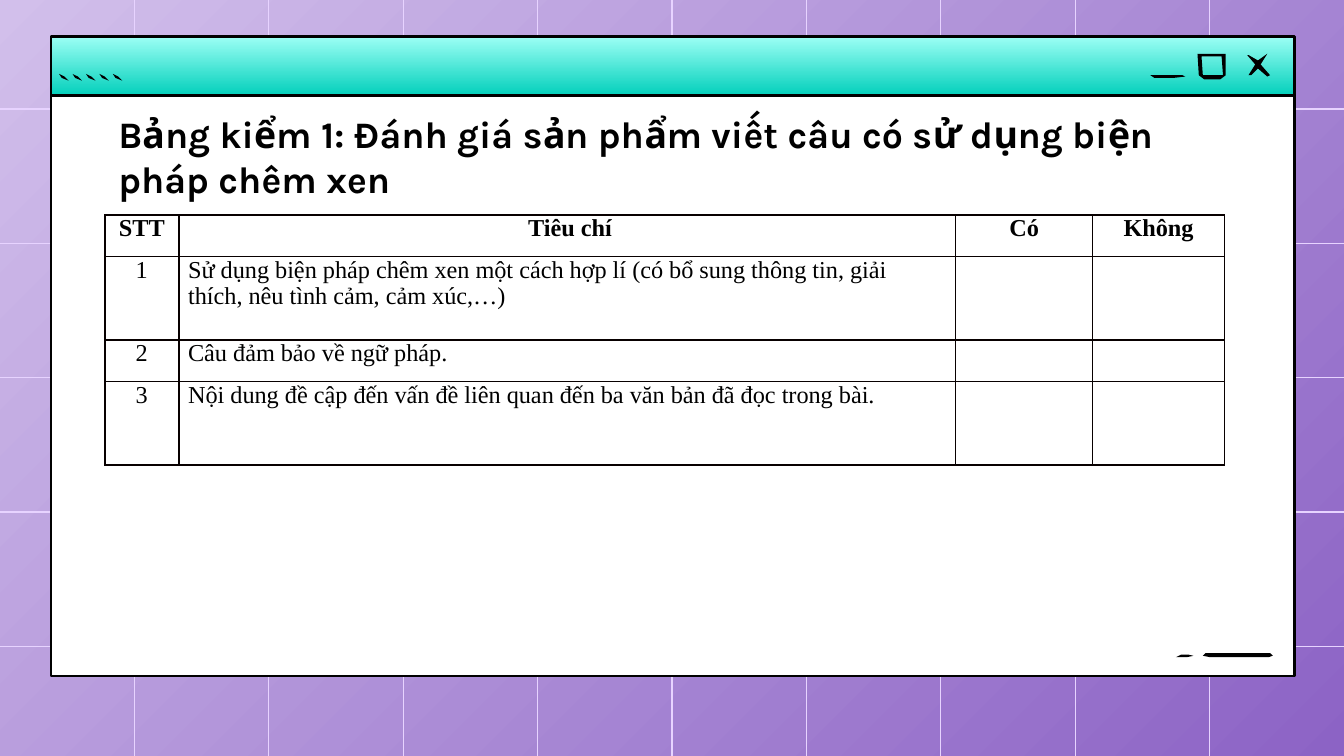
"""Build a slide with an assessment checklist in a retro window."""
from lxml.etree import SubElement
from pptx import Presentation
from pptx.dml.color import RGBColor
from pptx.enum.shapes import MSO_CONNECTOR, MSO_SHAPE
from pptx.enum.text import MSO_ANCHOR, MSO_AUTO_SIZE, PP_ALIGN
from pptx.oxml.ns import qn
from pptx.util import Inches, Pt

BLACK = RGBColor(0x00, 0x00, 0x00)
WHITE = RGBColor(0xFF, 0xFF, 0xFF)
LILAC = RGBColor(0xD2, 0xBF, 0xEB)
PURPLE = RGBColor(0x8C, 0x63, 0xC5)
GRID_LINE = RGBColor(0xE7, 0xD3, 0xFF)
MINT = RGBColor(0x9D, 0xFF, 0xF5)
TEAL = RGBColor(0x00, 0xCF, 0xBA)
BORDER = RGBColor(0x08, 0x00, 0x00)

COLUMNS = 10
ROWS = COLUMNS * 9 / 16
FIRST_ROW = 0.81
WINDOW_LEFT, WINDOW_WIDTH = 0.38, 9.25
CONTENT_LEFT = 0.78

TITLE = "Bảng kiểm 1: Đánh giá sản phẩm viết câu có sử dụng biện pháp chêm xen"
CHECKLIST = [
    ["STT", " Tiêu chí", "Có", "Không"],
    ["1", "Sử dụng biện pháp chêm xen một cách hợp lí (có bổ sung thông tin, giải "
          "thích, nêu tình cảm, cảm xúc,…)", "", ""],
    ["2", "Câu đảm bảo về ngữ pháp.", "", ""],
    ["3", "Nội dung đề cập đến vấn đề liên quan đến ba văn bản đã đọc trong bài.", "", ""],
]
COLUMN_WIDTHS = [0.55, 5.78, 1.02, 0.98]
ROW_HEIGHTS = [0.31, 0.62, 0.31, 0.62]

MAXIMIZE = [
    [(8.91, 0.4), (8.92, 0.56), (8.96, 0.59), (9.08, 0.59), (9.12, 0.56), (9.12, 0.4)],
    [(8.94, 0.42), (9.09, 0.42), (9.1, 0.56), (8.95, 0.56)],
]
CLOSE = [[(9.43, 0.4), (9.36, 0.45), (9.29, 0.41), (9.28, 0.41), (9.34, 0.48),
          (9.29, 0.56), (9.31, 0.56), (9.36, 0.51), (9.43, 0.57), (9.45, 0.56),
          (9.38, 0.48)]]
MINIMIZE = [[(8.56, 0.56), (8.59, 0.58), (8.73, 0.58), (8.82, 0.57), (8.8, 0.56)]]
LONG_DASH = [[(8.97, 4.86), (8.95, 4.88), (9, 4.89), (9.44, 4.89), (9.47, 4.88),
              (9.45, 4.86)]]
SHORT_DASH = [[(8.75, 4.89), (8.79, 4.87), (8.84, 4.87), (8.88, 4.88), (8.83, 4.89)]]
TICK = [(0, 0), (0.02, 0.03), (0.07, 0.05), (0.04, 0.02)]
TICK_LEFT, TICK_TOP, TICK_GAP, TICK_COUNT = 0.44, 0.55, 0.1, 5


def write_text(frame, text, font, size, bold=False, align=PP_ALIGN.LEFT):
    """Write one formatted paragraph into a text frame."""
    para = frame.paragraphs[0]
    para.alignment = align
    span = para.add_run()
    span.text = text
    span.font.name = font
    span.font.size = Pt(size)
    span.font.bold = bold
    span.font.color.rgb = BLACK


def fill_gradient(fill, start, end, angle):
    """Apply a two-colour linear gradient."""
    fill.gradient()
    fill.gradient_angle = angle
    for stop, color in zip(fill.gradient_stops, (start, end)):
        stop.color.rgb = color


def add_grid_line(page, start, end):
    """Add one thin background line."""
    line = page.shapes.add_connector(
        MSO_CONNECTOR.STRAIGHT, *(Inches(value) for value in start + end))
    line.line.color.rgb = GRID_LINE
    line.line.width = Pt(0.75)
    SubElement(line.element.spPr, qn("a:effectLst"))


def add_grid(page):
    """Cover the page with a one-inch grid."""
    for column in range(1, COLUMNS):
        add_grid_line(page, (column, 0), (column, ROWS))
    for row in range(5):
        add_grid_line(page, (0, FIRST_ROW + row), (COLUMNS, FIRST_ROW + row))


def add_panel(page, top, height):
    """Add an outlined part of the window and return it."""
    panel = page.shapes.add_shape(
        MSO_SHAPE.RECTANGLE, Inches(WINDOW_LEFT), Inches(top),
        Inches(WINDOW_WIDTH), Inches(height))
    panel.shadow.inherit = False
    panel.line.color.rgb = BLACK
    panel.line.width = Pt(1.5)
    return panel


def add_mark(page, contours):
    """Add a black hand-drawn mark made of closed contours."""
    outlines = [[(Inches(x), Inches(y)) for x, y in contour] for contour in contours]
    builder = page.shapes.build_freeform(*outlines[0][0])
    for index, points in enumerate(outlines):
        if index:
            builder.move_to(*points[0])
        builder.add_line_segments(points[1:], close=True)
    mark = builder.convert_to_shape()
    mark.shadow.inherit = False
    mark.fill.solid()
    mark.fill.fore_color.rgb = BLACK
    mark.line.fill.background()


def add_window(page):
    """Add the window with its bar, buttons and ornaments."""
    bar = add_panel(page, 0.27, 0.45)
    fill_gradient(bar.fill, MINT, TEAL, 270)
    body = add_panel(page, 0.71, 4.32)
    body.fill.solid()
    body.fill.fore_color.rgb = WHITE
    for contours in (MAXIMIZE, CLOSE, MINIMIZE, LONG_DASH, SHORT_DASH):
        add_mark(page, contours)
    for index in range(TICK_COUNT):
        left = TICK_LEFT + index * TICK_GAP
        add_mark(page, [[(left + x, TICK_TOP + y) for x, y in TICK]])


def add_title(page):
    """Place the title above the window."""
    title = page.shapes.title
    title.left, title.top = Inches(CONTENT_LEFT), Inches(0.73)
    title.width, title.height = Inches(8.43), Inches(0.73)
    frame = title.text_frame
    frame.word_wrap = True
    frame.auto_size = MSO_AUTO_SIZE.NONE
    frame.vertical_anchor = MSO_ANCHOR.TOP
    frame.margin_left = frame.margin_right = Inches(0.1)
    frame.margin_top = frame.margin_bottom = Inches(0.1)
    write_text(frame, TITLE, font="Karla", size=20, bold=True)
    page.shapes.element.append(title.element)


def set_borders(cell):
    """Draw all four borders of a cell."""
    properties = cell._tc.get_or_add_tcPr()
    for index, side in enumerate(("lnL", "lnR", "lnT", "lnB")):
        line = properties.makeelement(qn(f"a:{side}"), {"w": str(Pt(1))})
        fill = SubElement(line, qn("a:solidFill"))
        SubElement(fill, qn("a:srgbClr"), val=str(BORDER))
        properties.insert(index, line)


def add_checklist(page):
    """Add the table of criteria."""
    table = page.shapes.add_table(
        len(ROW_HEIGHTS), len(COLUMN_WIDTHS), Inches(CONTENT_LEFT), Inches(1.6),
        Inches(sum(COLUMN_WIDTHS)), Inches(sum(ROW_HEIGHTS))).table
    table.first_row = table.horz_banding = False
    for column, width in zip(table.columns, COLUMN_WIDTHS):
        column.width = Inches(width)
    for row, height in zip(table.rows, ROW_HEIGHTS):
        row.height = Inches(height)
    for row_index, texts in enumerate(CHECKLIST):
        for column_index, text in enumerate(texts):
            cell = table.cell(row_index, column_index)
            cell.margin_left = cell.margin_right = Inches(0.07)
            cell.margin_top = cell.margin_bottom = 0
            cell.fill.background()
            set_borders(cell)
            if text:
                header = row_index == 0
                centred = header or column_index == 0
                write_text(cell.text_frame, text, font="Times New Roman", size=13,
                           bold=header,
                           align=PP_ALIGN.CENTER if centred else PP_ALIGN.LEFT)


def main():
    """Build and save the deck."""
    deck = Presentation()
    deck.slide_width, deck.slide_height = Inches(COLUMNS), Inches(ROWS)
    page = deck.slides.add_slide(deck.slide_layouts[5])
    fill_gradient(page.background.fill, LILAC, PURPLE, 315)
    add_grid(page)
    add_window(page)
    add_title(page)
    add_checklist(page)
    deck.save("out.pptx")


if __name__ == "__main__":
    main()
